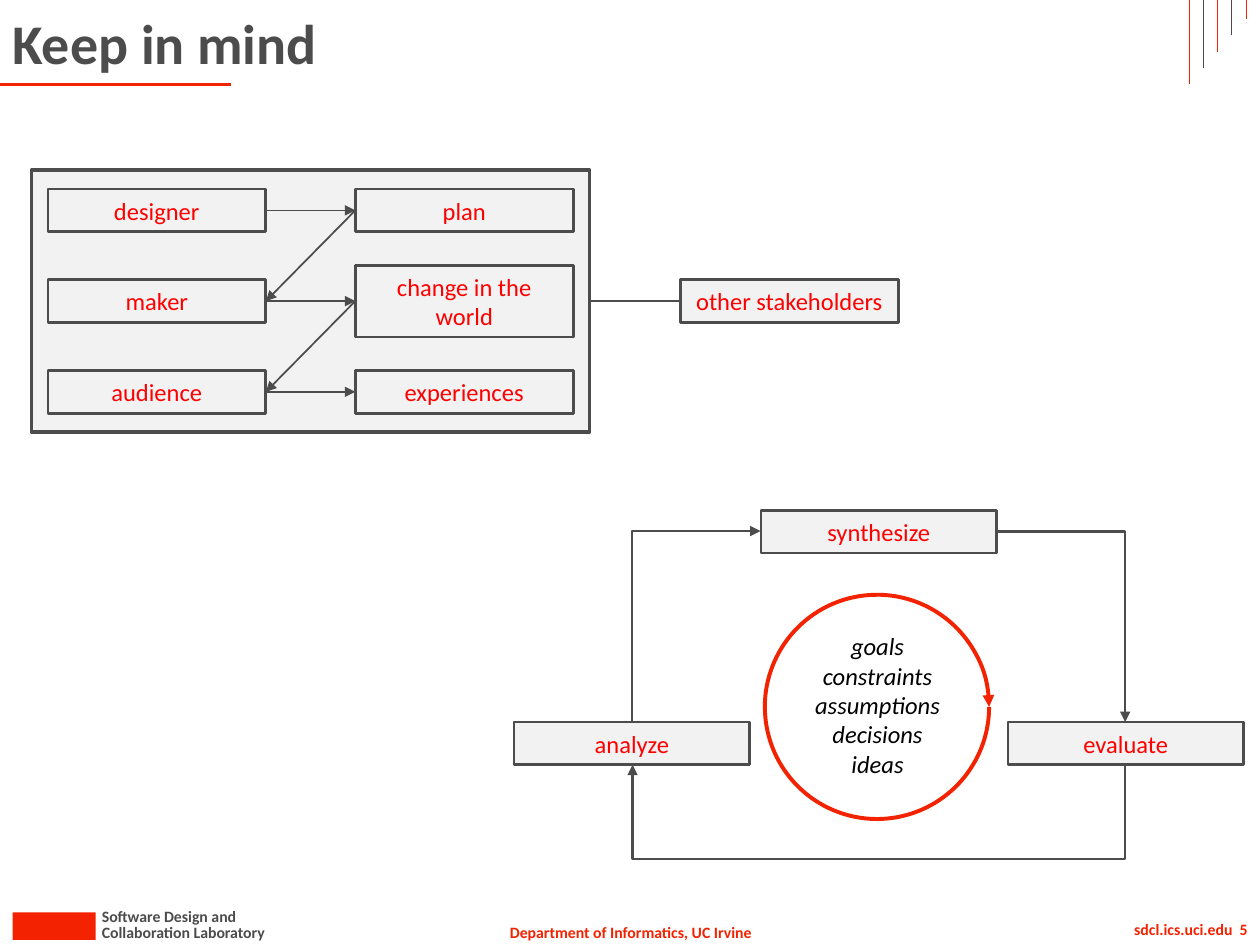
from lxml import etree
from pptx import Presentation
from pptx.dml.color import RGBColor
from pptx.enum.shapes import MSO_CONNECTOR, MSO_SHAPE
from pptx.enum.text import MSO_ANCHOR, PP_ALIGN
from pptx.oxml.ns import qn
from pptx.util import Inches, Pt

STRAIGHT, ELBOW = MSO_CONNECTOR.STRAIGHT, MSO_CONNECTOR.ELBOW
RECTANGLE, ARC = MSO_SHAPE.RECTANGLE, MSO_SHAPE.ARC
LEFT, CENTER, RIGHT = PP_ALIGN.LEFT, PP_ALIGN.CENTER, PP_ALIGN.RIGHT
TOP, MIDDLE = MSO_ANCHOR.TOP, MSO_ANCHOR.MIDDLE

COLORS = {
    "accent": "F32200",
    "dark": "4C4C4C",
    "box": "F2F2F2",
    "label": "FF0000",
    "black": "000000",
}

presentation = Presentation()
presentation.slide_width = Inches(10)
presentation.slide_height = Inches(7.5)
slide = presentation.slides.add_slide(presentation.slide_layouts[6])
shapes = slide.shapes


def write_text(shape, lines, size, color, align, anchor=TOP, wrap=True, bold=False, italic=False):
    frame = shape.text_frame
    frame.word_wrap = wrap
    frame.vertical_anchor = anchor
    for index, line in enumerate(lines):
        paragraph = frame.paragraphs[0] if index == 0 else frame.add_paragraph()
        paragraph.alignment = align
        run = paragraph.add_run()
        run.text = line
        run.font.name = "Calibri"
        run.font.size = Pt(size)
        run.font.bold = bold
        run.font.italic = italic
        run.font.color.rgb = RGBColor.from_string(COLORS[color])


def add_line(start, end, color, width, arrow=False, kind=STRAIGHT):
    line = shapes.add_connector(kind, *(Inches(value) for value in (*start, *end)))
    line.line.color.rgb = RGBColor.from_string(COLORS[color])
    line.line.width = Pt(width)
    properties = line._element.spPr
    if arrow:
        etree.SubElement(properties.find(qn("a:ln")), qn("a:tailEnd"), type="triangle")
    etree.SubElement(properties, qn("a:effectLst"))
    return line


# Footer and title
texts = [
    ("Department of Informatics, UC Irvine", (3.93, 7.27, 2.15, 0.25), 9, "accent", CENTER, TOP, False),
    ("Collaboration Laboratory", (0.71, 7.27, 1.53, 0.25), 9, "dark", LEFT, TOP, False),
    ("Software Design and", (0.71, 7.15, 1.29, 0.25), 9, "dark", LEFT, TOP, False),
    ("sdcl.ics.uci.edu  5", (7.84, 7.25, 2.16, 0.25), 9, "accent", RIGHT, TOP, True),
    ("Keep in mind", (0, 0, 9, 0.67), 32, "dark", LEFT, MIDDLE, True),
]
for text, bounds, size, color, align, anchor, wrap in texts:
    text_box = shapes.add_textbox(*(Inches(value) for value in bounds))
    write_text(text_box, [text], size, color, align, anchor, wrap, bold=True)

# Plain block at the left of the footer
footer_block = shapes.add_shape(RECTANGLE, Inches(0.1), Inches(7.24), Inches(0.66), Inches(0.22))
footer_block.shadow.inherit = False
footer_block.fill.solid()
footer_block.fill.fore_color.rgb = RGBColor.from_string(COLORS["accent"])
footer_block.line.fill.background()

# Title rule and corner lines
add_line((0, 0.67), (1.83, 0.67), "accent", 1.5)
for index in range(5):
    x = 9.44 + index * 0.45 / 4
    color = "dark" if index % 2 else "accent"
    add_line((x, 0.67 - index * 0.13), (x, 0), color, 0.5)

# Grid of the stakeholder diagram: three rows, three columns
rows = [1.67 + index * 0.72 for index in range(3)]
actor_column, result_column, other_column = 0.38, 2.82, 5.4
column_width, box_height, tall_height = 1.73, 0.34, 0.57
actor_edge = actor_column + column_width

# Grid of the design cycle: three columns, two rows
cycle_columns = [4.08 + index * 1.96 for index in range(3)]
cycle_width = 1.87
cycle_top, cycle_bottom = 4.22, 5.9

# Panel, then the diagonal arrows that run under the boxes
panel = shapes.add_shape(RECTANGLE, Inches(0.25), Inches(1.35), Inches(4.43), Inches(2.08))
panel.shadow.inherit = False
panel.fill.solid()
panel.fill.fore_color.rgb = RGBColor.from_string(COLORS["box"])
panel.line.color.rgb = RGBColor.from_string(COLORS["dark"])
panel.line.width = Pt(2)
for upper, lower in zip(rows, rows[1:]):
    add_line((result_column, upper), (actor_edge, lower), "dark", 1, arrow=True)

# Labelled boxes: text, left, middle, width, height
boxes = [
    ("analyze", cycle_columns[0], cycle_bottom, cycle_width, box_height),
    ("synthesize", cycle_columns[1], cycle_top, cycle_width, box_height),
    ("evaluate", cycle_columns[2], cycle_bottom, cycle_width, box_height),
    ("designer", actor_column, rows[0], column_width, box_height),
    ("plan", result_column, rows[0], column_width, box_height),
    ("maker", actor_column, rows[1], column_width, box_height),
    ("change in the world", result_column, rows[1], column_width, tall_height),
    ("audience", actor_column, rows[2], column_width, box_height),
    ("experiences", result_column, rows[2], column_width, box_height),
    ("other stakeholders", other_column, rows[1], column_width, box_height),
]
for text, left, middle, width, height in boxes:
    box = shapes.add_shape(
        RECTANGLE, Inches(left), Inches(middle - height / 2), Inches(width), Inches(height)
    )
    box.shadow.inherit = False
    box.fill.solid()
    box.fill.fore_color.rgb = RGBColor.from_string(COLORS["box"])
    box.line.color.rgb = RGBColor.from_string(COLORS["dark"])
    box.line.width = Pt(1.5)
    write_text(box, [text], 14, "label", CENTER, MIDDLE)

# Straight links between the stakeholder boxes
for row in rows:
    add_line((actor_edge, row), (result_column, row), "dark", 1, arrow=True)
add_line((4.68, rows[1]), (other_column, rows[1]), "dark", 1)

# Bent arrows of the cycle: corners before rotation, preset, transform, bend
quarter_turn = str(90 * 60000)
bends = [
    ((4.77, 4.46), (6.28, 5.48), "bentConnector2", {"rot": quarter_turn, "flipH": "1", "flipV": "1"}, None),
    ((7.91, 4.22), (8.93, 5.73), "bentConnector2", {}, None),
    ((6.97, 4.11), (6.98, 8.02), "bentConnector3", {"rot": quarter_turn}, 7700000),
]
for start, end, preset, transform, bend in bends:
    arrow = add_line(start, end, "dark", 1.5, arrow=True, kind=ELBOW)
    properties = arrow._element.spPr
    for name, value in transform.items():
        properties.find(qn("a:xfrm")).set(name, value)
    geometry = properties.find(qn("a:prstGeom"))
    geometry.set("prst", preset)
    if bend:
        guides = geometry.find(qn("a:avLst"))
        etree.SubElement(guides, qn("a:gd"), name="adj1", fmla=f"val {bend}")

# Circular arrow made of four quarter arcs
for angle in range(0, 360, 90):
    arc = shapes.add_shape(ARC, Inches(6.07), Inches(4.72), Inches(1.78), Inches(1.78))
    arc.shadow.inherit = False
    arc.rotation = angle
    arc.fill.background()
    arc.line.color.rgb = RGBColor.from_string(COLORS["accent"])
    arc.line.width = Pt(2.25)
    if angle == 0:
        outline = arc._element.spPr.find(qn("a:ln"))
        etree.SubElement(outline, qn("a:tailEnd"), type="triangle")

# Words inside the circle
words = ["goals", "constraints", "assumptions", "decisions", "ideas"]
text_box = shapes.add_textbox(Inches(6.36), Inches(4.96), Inches(1.21), Inches(1.28))
write_text(text_box, words, 14, "black", CENTER, wrap=False, italic=True)

presentation.save("out.pptx")
